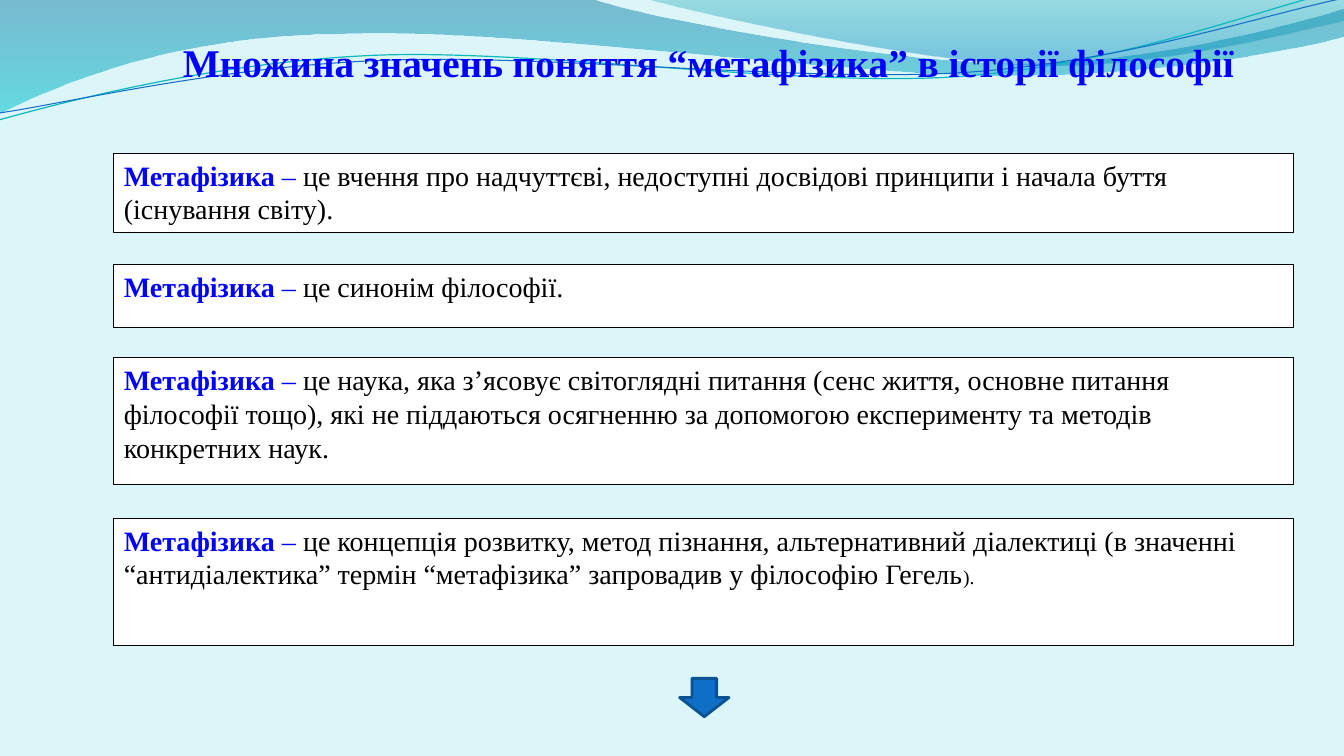
from dataclasses import dataclass
from math import cos, radians, sin

from lxml.etree import SubElement
from pptx import Presentation
from pptx.dml.color import RGBColor as Rgb
from pptx.enum.shapes import MSO_SHAPE as Shape
from pptx.enum.text import MSO_ANCHOR as Anchor, PP_ALIGN as Align
from pptx.oxml.ns import qn
from pptx.util import Inches, Pt

# The grid has square cells of one inch; all boxes are given in cells.
COLS, ROWS = 13.33, 7.5
TILT = 357.3


@dataclass(frozen=True)
class Theme:
    font: str = "Times New Roman"
    back: str = "DBF5F9"
    paper: str = "FFFFFF"
    ink: str = "000000"
    key: str = "0000FF"
    arrow: str = "0F6FC6"
    edge: str = "0B5292"
    teal: str = "0AB8BF"
    head: int = 28
    body: int = 20
    small: int = 14


@dataclass(frozen=True)
class Box:
    left: float
    top: float
    width: float
    height: float

    def emu(self):
        return [Inches(n) for n in (self.left, self.top, self.width, self.height)]


THEME = Theme()

# Each wave is a start point followed by lines (one point) or curves (three).
# A band is (wave, stops), a stop being (place, colour, opacity) in percent.
BANDS = [
    ([[(0, -0.01)], [(5.87, -0.01)],
      [(6.34, 0.17), (8.85, 0.63), (10.11, 0.63)],
      [(11.38, 0.63), (12.78, 0.26), (13.33, 0.09)],
      [(13.35, 0.36)],
      [(13.11, 0.44), (11.6, 0.76), (9.94, 0.75)],
      [(8.29, 0.75), (5.09, 0.28), (3.43, 0.34)],
      [(1.72, 0.35), (0.61, 0.83), (-0.01, 1.13)],
      [(0, -0.01)]],
     [(0, "0074A1", 45), (100, "00C6CF", 55)]),
    ([[(6.39, -0.01)],
      [(6.79, 0.11), (9.09, 0.62), (10.25, 0.65)],
      [(11.41, 0.69), (12.82, 0.32), (13.33, 0.21)],
      [(13.33, 0)], [(6.39, -0.01)]],
     [(0, "00A1A9", 30), (80, "008BBF", 45)]),
]
# A strand is (wave, pivot of its tilt, colour, width).
STRANDS = [
    ([[(-0.01, 1.19)],
      [(0.64, 1.01), (2.11, 0.62), (3.69, 0.55)],
      [(5.27, 0.48), (7.9, 0.87), (9.5, 0.76)],
      [(11.1, 0.65), (12.52, 0.08), (13.31, -0.1)]],
     (6.65, 0.58), THEME.teal, 0.85),
    ([[(0, 1.12)],
      [(0.63, 1.03), (2.18, 0.66), (3.78, 0.6)],
      [(5.37, 0.53), (7.96, 0.82), (9.55, 0.72)],
      [(11.15, 0.62), (12.55, 0.14), (13.34, -0.02)]],
     (6.67, 0.59), THEME.arrow, 0.75),
]

TITLE = "Множина значень поняття “метафізика” в історії філософії"
TERM = "Метафізика"
# Top of the card within the stack, height, meaning, small ending
CARDS = [
    (0, 0.79, "це вчення про надчуттєві, недоступні досвідові принципи і "
              "начала буття (існування світу).", ""),
    (1.1, 0.63, "це синонім філософії.", ""),
    (2.03, 1.26, "це наука, яка з’ясовує світоглядні питання (сенс життя, "
                 "основне питання філософії тощо), які не піддаються "
                 "осягненню за допомогою експерименту та методів конкретних "
                 "наук.", ""),
    (3.62, 1.26, "це концепція розвитку, метод пізнання, альтернативний "
                 "діалектиці (в значенні “антидіалектика” термін “метафізика” "
                 "запровадив у філософію Гегель", ")."),
]


def level(wave, pivot):
    """Turn the points of a tilted wave back around its pivot."""
    turn = radians(-TILT)
    px, py = pivot
    return [[(px + (x - px) * cos(turn) - (y - py) * sin(turn),
              py + (x - px) * sin(turn) + (y - py) * cos(turn))
             for x, y in part] for part in wave]


def outline(shapes, box, wave, close=False):
    dots = [(Inches(box.left + x), Inches(box.top + y))
            for part in wave for x, y in part]
    form = shapes.build_freeform(*dots[0])
    form.add_line_segments(dots[1:], close=close)
    shape = form.convert_to_shape()
    shape.shadow.inherit = False
    bend(shape, wave)
    return shape


def bend(shape, wave):
    """Join each three segments that make a curve into one."""
    track = next(shape._element.iter(qn("a:path")))
    legs = iter(track.findall(qn("a:lnTo")))
    for part in wave[1:]:
        group = [next(legs) for _ in part]
        if len(part) == 3:
            first = group[0]
            first.addprevious(curve := SubElement(track, qn("a:cubicBezTo")))
            for leg in group:
                curve.append(leg[0])
                track.remove(leg)


def shade(shape, stops):
    """Fill from top to bottom with see-through colours."""
    shape.fill.gradient()
    grad = shape._element.spPr.find(qn("a:gradFill"))
    for child in list(grad):
        grad.remove(child)
    places = SubElement(grad, qn("a:gsLst"))
    for place, color, alpha in stops:
        stop = SubElement(places, qn("a:gs"), pos=str(place * 1000))
        tint = SubElement(stop, qn("a:srgbClr"), val=color)
        SubElement(tint, qn("a:alpha"), val=str(alpha * 1000))
    SubElement(grad, qn("a:lin"), ang="5400000", scaled="0")


def stroke(shape, color, width):
    shape.line.color.rgb = Rgb.from_string(color)
    shape.line.width = Pt(width)


def block(shapes, box, kind, fill, line, width):
    shape = shapes.add_shape(kind, *box.emu())
    shape.shadow.inherit = False
    shape.fill.solid()
    shape.fill.fore_color.rgb = Rgb.from_string(fill)
    stroke(shape, line, width)
    return shape


def style(run, size, color, bold=False):
    run.font.name = THEME.font
    run.font.size = Pt(size)
    run.font.bold = bold
    run.font.color.rgb = Rgb.from_string(color)


def waves(slide, box):
    for wave, stops in BANDS:
        band = outline(slide.shapes, box, wave, True)
        shade(band, stops)
        band.line.fill.background()
    group = slide.shapes.add_group_shape()
    for wave, pivot, color, width in STRANDS:
        strand = outline(group.shapes, box, level(wave, pivot))
        strand.rotation = TILT
        strand.fill.background()
        stroke(strand, color, width)


def title(slide, box):
    frame = slide.shapes.add_textbox(*box.emu()).text_frame
    frame.word_wrap = True
    frame.text = TITLE
    line = frame.paragraphs[0]
    line.alignment = Align.CENTER
    style(line.runs[0], THEME.head, THEME.key, True)


def card(shapes, box, text, tail):
    shape = block(shapes, box, Shape.RECTANGLE, THEME.paper, THEME.ink, 0.75)
    frame = shape.text_frame
    frame.word_wrap = True
    frame.vertical_anchor = Anchor.TOP
    line = frame.paragraphs[0]
    line.alignment = Align.LEFT
    parts = [(TERM, THEME.body, THEME.key, True), (" – ", THEME.body, THEME.key),
             (text, THEME.body, THEME.ink), (tail, THEME.small, THEME.ink)]
    for words, *look in parts:
        if words:
            run = line.add_run()
            run.text = words
            style(run, *look)


def stack(slide, box):
    group = slide.shapes.add_group_shape()
    for top, high, text, tail in CARDS:
        spot = Box(box.left, box.top + top, box.width, high)
        card(group.shapes, spot, text, tail)


def main():
    deck = Presentation()
    deck.slide_width, deck.slide_height = Inches(COLS), Inches(ROWS)
    slide = deck.slides.add_slide(deck.slide_layouts[6])
    slide.background.fill.solid()
    slide.background.fill.fore_color.rgb = Rgb.from_string(THEME.back)
    waves(slide, Box(0, 0, COLS, 1.2))
    title(slide, Box(1.33, 0.33, 11.39, 1.04))
    stack(slide, Box(1.13, 1.52, 11.7, 4.88))
    block(slide.shapes, Box(6.74, 6.73, 0.49, 0.38), Shape.DOWN_ARROW,
          THEME.arrow, THEME.edge, 2)
    deck.save("out.pptx")


if __name__ == "__main__":
    main()
